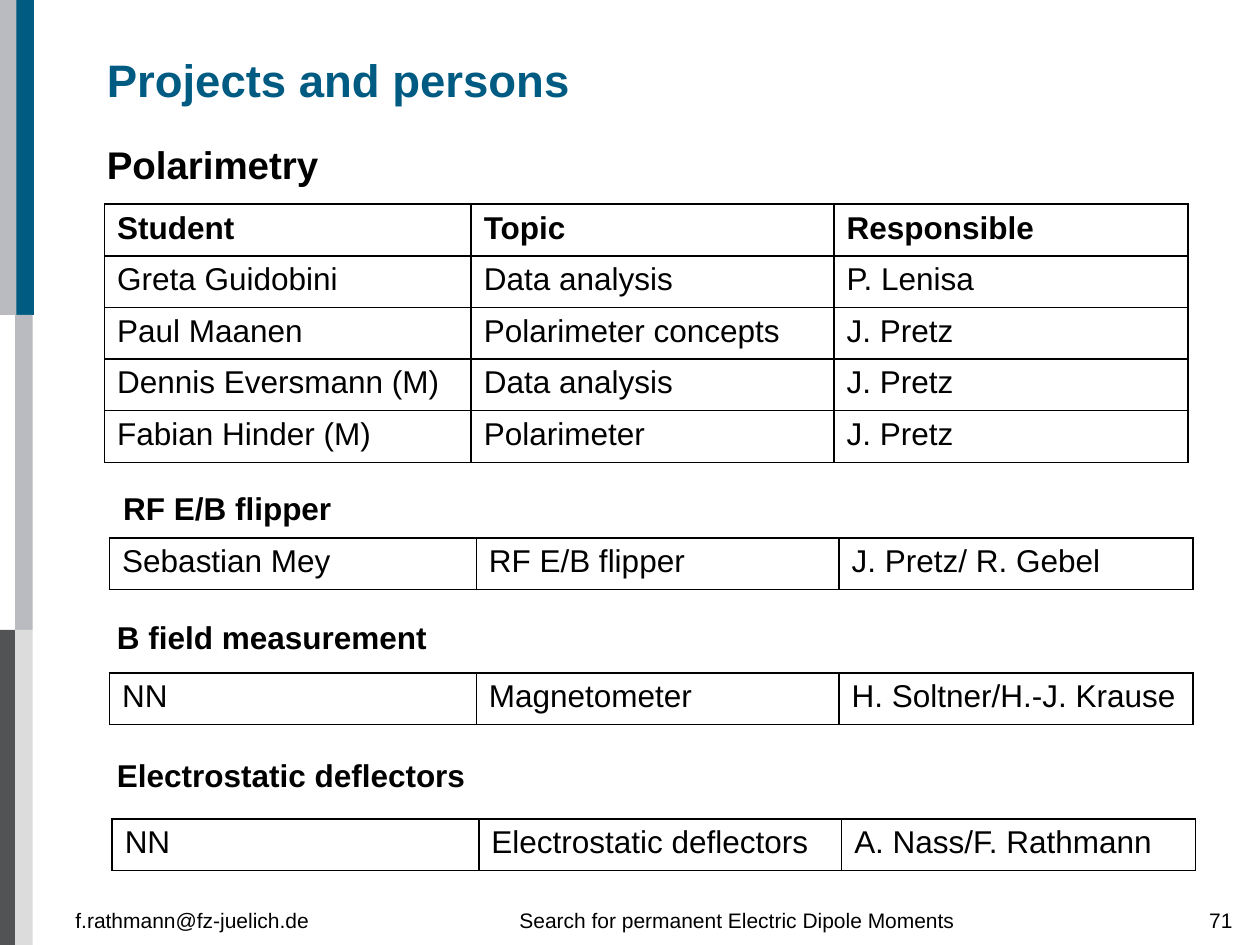
from lxml.etree import SubElement
from pptx import Presentation
from pptx.dml.color import RGBColor
from pptx.enum.shapes import MSO_SHAPE
from pptx.enum.text import MSO_ANCHOR, PP_ALIGN
from pptx.oxml.ns import qn
from pptx.util import Inches, Pt

COLORS = {
    "text": "000000",
    "blue": "005B82",
    "silver": "B9BBC0",
    "charcoal": "515355",
    "light": "DCDCDC",
}
COLUMN_WIDTHS = [2.91, 2.88, 2.81]
ROW_HEIGHT = 0.41


class SlideBuilder:
    """Hold the style and the current slide, and add each kind of element."""

    font_name = "Arial"

    def __init__(self, slide):
        self.slide = slide

    def style(self, paragraph, size, bold=False, color="text"):
        for run in paragraph.runs:
            run.font.name = self.font_name
            run.font.size = Pt(size)
            run.font.bold = bold
            run.font.color.rgb = RGBColor.from_string(COLORS[color])

    def bar(self, left, top, color):
        shape = self.slide.shapes.add_shape(
            MSO_SHAPE.RECTANGLE, Inches(left), Inches(top), Inches(0.14), Inches(2.5))
        shape.shadow.inherit = False
        shape.fill.solid()
        shape.fill.fore_color.rgb = RGBColor.from_string(COLORS[color])
        shape.line.fill.background()

    def text(self, box, text, size, bold=False, color="text",
             anchor=MSO_ANCHOR.TOP, align=PP_ALIGN.LEFT, wrap=True):
        shape = self.slide.shapes.add_textbox(*[Inches(length) for length in box])
        text_frame = shape.text_frame
        text_frame.word_wrap = wrap
        text_frame.vertical_anchor = anchor
        text_frame.text = text
        paragraph = text_frame.paragraphs[0]
        paragraph.alignment = align
        self.style(paragraph, size, bold, color)

    def border(self, cell):
        properties = cell._tc.get_or_add_tcPr()
        for index, side in enumerate(("a:lnL", "a:lnR", "a:lnT", "a:lnB")):
            line = properties.makeelement(qn(side), {"w": str(Pt(1))})
            fill = SubElement(line, qn("a:solidFill"))
            SubElement(fill, qn("a:srgbClr"), val=COLORS["text"])
            properties.insert(index, line)

    def table(self, left, top, rows, header=False):
        frame = self.slide.shapes.add_table(
            len(rows), len(COLUMN_WIDTHS), Inches(left), Inches(top),
            Inches(sum(COLUMN_WIDTHS)), Inches(ROW_HEIGHT * len(rows)))
        table = frame.table
        table.first_row = header
        table.horz_banding = False
        for column, width in zip(table.columns, COLUMN_WIDTHS):
            column.width = Inches(width)
        for row_index, values in enumerate(rows):
            table.rows[row_index].height = Inches(ROW_HEIGHT)
            for column_index, value in enumerate(values):
                cell = table.cell(row_index, column_index)
                cell.text = value
                cell.fill.background()
                self.style(cell.text_frame.paragraphs[0], 18, header and row_index == 0)
                self.border(cell)


def main():
    presentation = Presentation()
    presentation.slide_width = Inches(10)
    presentation.slide_height = Inches(7.5)
    builder = SlideBuilder(presentation.slides.add_slide(presentation.slide_layouts[6]))

    for left, top, color in [
        (0, 0, "silver"), (0, 5, "charcoal"),
        (0.13, 0, "blue"), (0.12, 2.5, "silver"), (0.12, 5, "light"),
    ]:
        builder.bar(left, top, color)

    for left, width, text, align in [
        (0.5, 2.18, "f.rathmann@fz-juelich.de", PP_ALIGN.LEFT),
        (2.76, 6.18, "Search for permanent Electric Dipole Moments", PP_ALIGN.CENTER),
        (9.02, 0.86, "71", PP_ALIGN.RIGHT),
    ]:
        builder.text((left, 7.05, width, 0.4), text, 12,
                     anchor=MSO_ANCHOR.BOTTOM, align=align)

    builder.text((0.75, 0.25, 8.5, 0.76), "Projects and persons", 26, True, "blue",
                 anchor=MSO_ANCHOR.MIDDLE)
    builder.text((0.75, 1.07, 8.5, 0.5), "Polarimetry", 22, True)
    builder.table(0.83, 1.62, [
        ("Student", "Topic", "Responsible"),
        ("Greta Guidobini", "Data analysis", "P. Lenisa"),
        ("Paul Maanen", "Polarimeter concepts", "J. Pretz"),
        ("Dennis Eversmann (M)", "Data analysis", "J. Pretz"),
        ("Fabian Hinder (M)", "Polarimeter", "J. Pretz"),
    ], header=True)

    for heading, heading_box, left, top, row in [
        ("RF E/B flipper", (0.88, 3.83, 1.87, 0.4), 0.87, 4.27,
         ("Sebastian Mey", "RF E/B flipper", "J. Pretz/ R. Gebel")),
        ("B field measurement", (0.83, 4.86, 2.68, 0.4), 0.87, 5.34,
         ("NN", "Magnetometer", "H. Soltner/H.-J. Krause")),
        ("Electrostatic deflectors", (0.83, 5.95, 2.99, 0.4), 0.89, 6.5,
         ("NN", "Electrostatic deflectors", "A. Nass/F. Rathmann")),
    ]:
        builder.text(heading_box, heading, 18, True, wrap=False)
        builder.table(left, top, [row])

    presentation.save("out.pptx")


if __name__ == "__main__":
    main()
